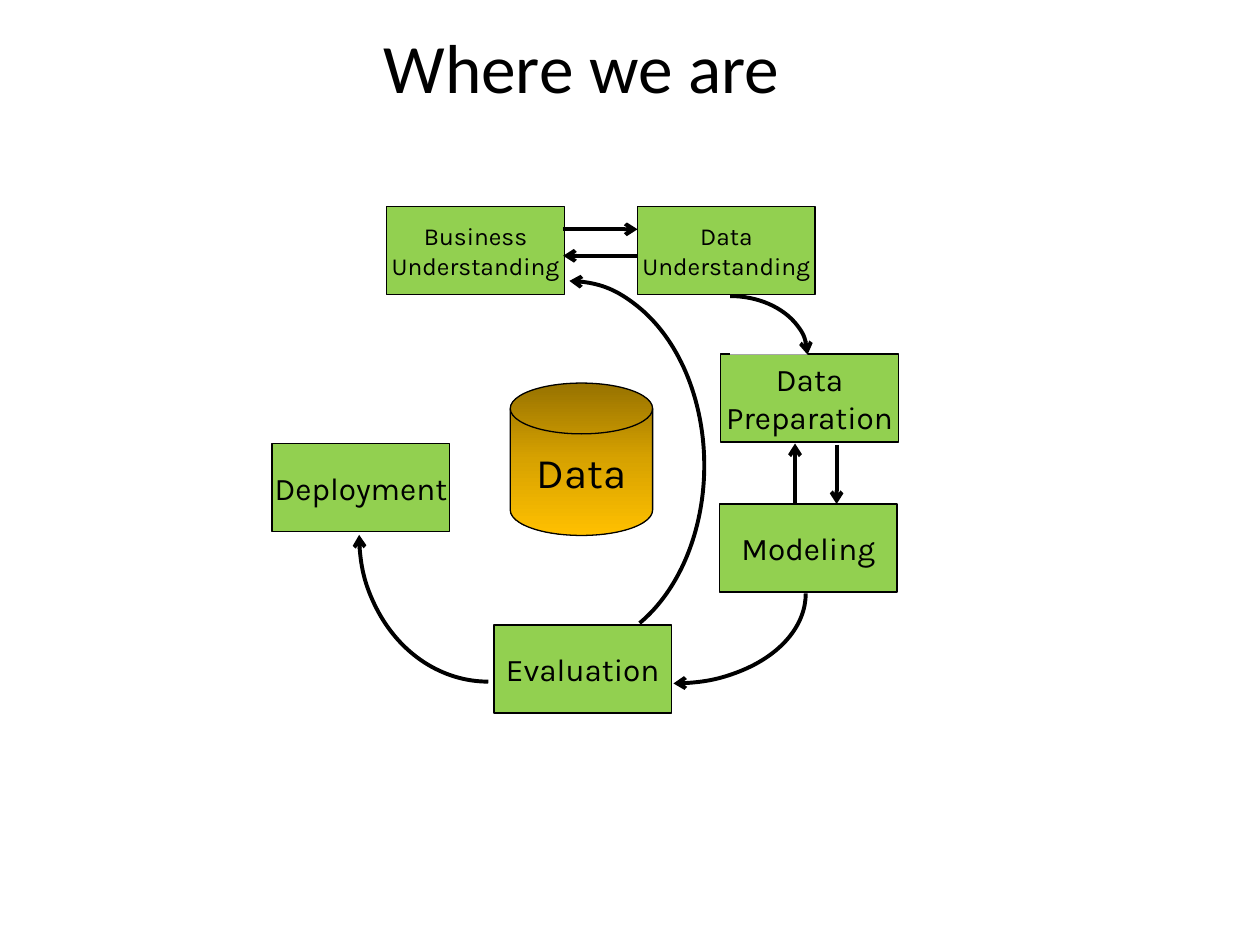
import copy
from dataclasses import dataclass

import pptx
import pptx.dml.color
import pptx.enum.shapes
import pptx.enum.text
import pptx.oxml
import pptx.oxml.ns
import pptx.util

SHAPE = pptx.enum.shapes.MSO_SHAPE
BLACK, WHITE, GREEN = "000000", "FFFFFF", "92D050"
GOLD_STOPS = [(0, "977200"), (0.5, "D7A200"), (1, "FFC000")]

# Grid of 100 columns by 75 rows, square cells
CELL = pptx.util.Inches(0.1)
STEP_COLS, STEP_ROWS = 14.1, 7


@dataclass
class Step:
    label: str
    col: float
    row: float
    size: int = 18


@dataclass
class Link:
    start: tuple[float, float]
    end: tuple[float, float]


@dataclass
class Curve:
    col: float
    row: float
    cols: float
    rows: float
    turn: int = 0
    arrow_end: str = "tailEnd"
    sweep: tuple[float, float] = (162, 0)


STEPS = [
    Step("Business\nUnderstanding", 30.7, 16.4, 14),
    Step("Data\nUnderstanding", 50.6, 16.4, 14),
    Step("Data\nPreparation", 57.2, 28.1),
    Step("Modeling", 57.1, 40),
    Step("Evaluation", 39.2, 49.6),
    Step("Deployment", 21.6, 35.2),
]
LINKS = [
    Link((44.7, 18.2), (50.6, 18.2)),
    Link((50.6, 20.3), (44.7, 20.3)),
    Link((66.4, 35.3), (66.4, 40)),
    Link((63.1, 39.9), (63.1, 35.2)),
]
CURVES = [
    Curve(51.8, 23.5, 12.3, 9.3),  # data understanding to preparation
    Curve(46.3, 36.6, 14.3, 21, turn=90),  # modeling to evaluation
    Curve(34.5, 22.3, 21.4, 29.3, arrow_end="headEnd", sweep=(162, 39.59)),  # back to business
    Curve(28.5, 30.8, 20.5, 23.3, turn=180),  # evaluation to deployment
]


def grid(*cells: float) -> list[int]:
    return [round(cell * CELL) for cell in cells]


def color(hex_code: str) -> pptx.dml.color.RGBColor:
    return pptx.dml.color.RGBColor.from_string(hex_code)


def set_line(item, width: float) -> None:
    item.line.color.rgb = color(BLACK)
    item.line.width = pptx.util.Pt(width)


def add_arrowhead(item, end: str) -> None:
    line = item.line._get_or_add_ln()
    line.append(pptx.oxml.parse_xml(
        f'<a:{end} {pptx.oxml.ns.nsdecls("a")} type="arrow"/>'))


def write(item, text: str, size: float, font: str, wrap: bool = False) -> None:
    frame = item.text_frame
    frame.text = text
    frame.word_wrap = wrap
    frame.vertical_anchor = pptx.enum.text.MSO_ANCHOR.MIDDLE
    for paragraph in frame.paragraphs:
        paragraph.alignment = pptx.enum.text.PP_ALIGN.CENTER
        paragraph.font.size = pptx.util.Pt(size)
        paragraph.font.name = font
        paragraph.font.color.rgb = color(BLACK)


def add_filled(slide, kind, cells: tuple, fill: str, width: float):
    shape = slide.shapes.add_shape(kind, *grid(*cells))
    shape.shadow.inherit = False
    shape.fill.solid()
    shape.fill.fore_color.rgb = color(fill)
    set_line(shape, width)
    return shape


def add_step(slide, step: Step) -> None:
    box = add_filled(slide, SHAPE.RECTANGLE,
                     (step.col, step.row, STEP_COLS, STEP_ROWS), GREEN, 0.75)
    write(box, step.label, step.size, "Karla")


def add_link(slide, link: Link) -> None:
    arrow = slide.shapes.add_connector(
        pptx.enum.shapes.MSO_CONNECTOR.STRAIGHT, *grid(*link.start, *link.end))
    set_line(arrow, 2.25)
    add_arrowhead(arrow, "tailEnd")
    arrow._element.spPr.append(pptx.oxml.parse_xml(
        f'<a:effectLst {pptx.oxml.ns.nsdecls("a")}/>'))


def add_curve(slide, curve: Curve) -> None:
    arc = add_filled(slide, SHAPE.ARC,
                     (curve.col, curve.row, curve.cols, curve.rows), WHITE, 2.25)
    arc.adjustments[0], arc.adjustments[1] = curve.sweep
    arc.rotation = curve.turn
    add_arrowhead(arc, curve.arrow_end)


def add_data_store(slide) -> None:
    store = add_filled(slide, SHAPE.FLOWCHART_MAGNETIC_DISK,
                       (40.5, 30.4, 11.3, 12.1), GREEN, 0.75)
    store.fill.gradient()
    store.fill.gradient_angle = 270
    # The default gradient has two stops; add the middle one
    stop_list = store._element.spPr.find(".//" + pptx.oxml.ns.qn("a:gsLst"))
    stop_list.insert(1, copy.deepcopy(stop_list[0]))
    for stop, (position, shade) in zip(store.fill.gradient_stops, GOLD_STOPS):
        stop.position = position
        stop.color.rgb = color(shade)
    write(store, "Data", 24, "Karla")


def main() -> None:
    deck = pptx.Presentation()
    deck.slide_width, deck.slide_height = grid(100, 75)
    slide = deck.slides.add_slide(deck.slide_layouts[6])

    # Title
    title = slide.shapes.add_textbox(*grid(4.5, 1.7, 83.3, 7.1))
    write(title, "Where we are", 39.6, "Calibri", wrap=True)

    # Process cycle
    for step in STEPS:
        add_step(slide, step)
    for link in LINKS:
        add_link(slide, link)
    for curve in CURVES:
        add_curve(slide, curve)

    # Data at the centre
    add_data_store(slide)

    deck.save("out.pptx")


if __name__ == "__main__":
    main()
